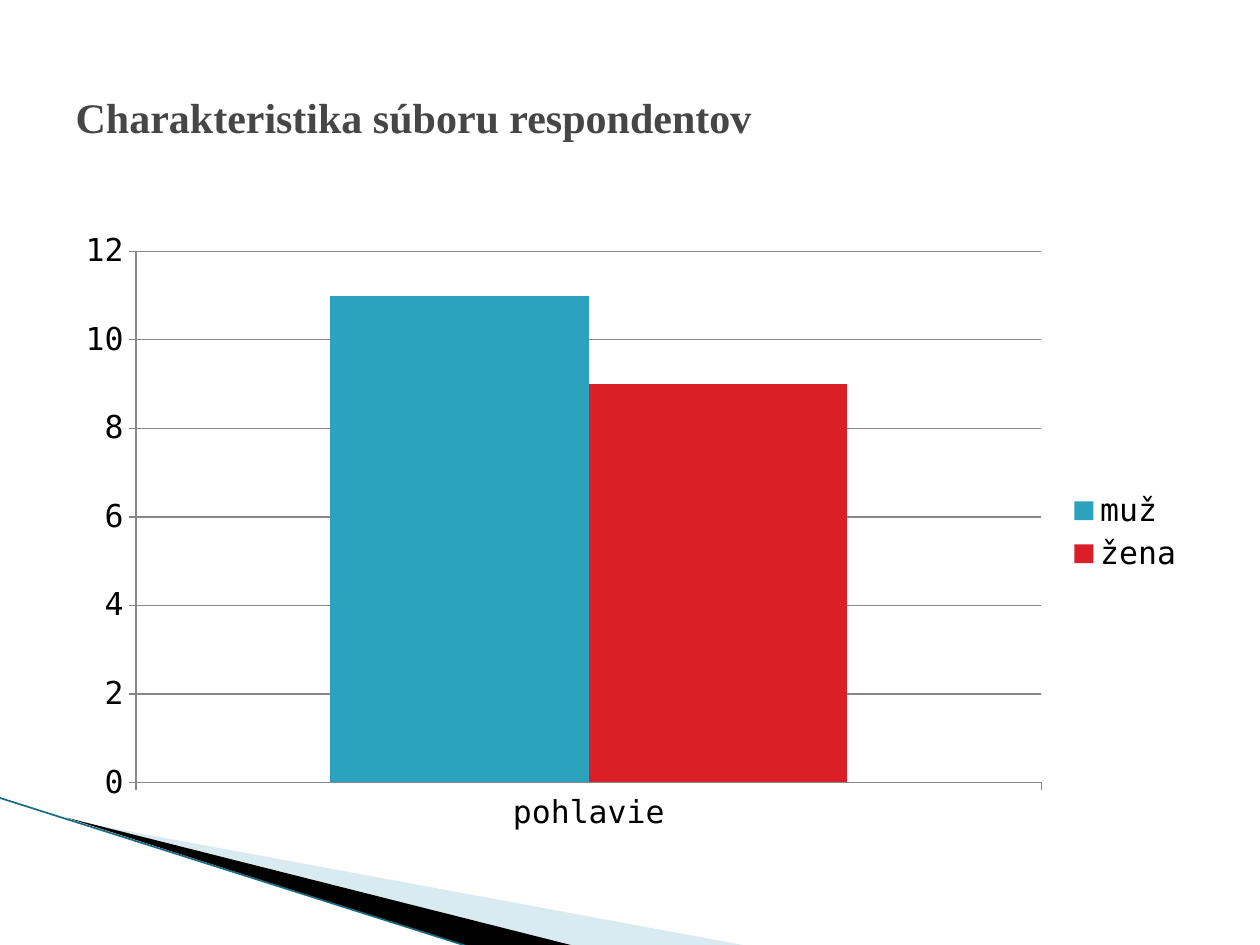
from lxml.etree import SubElement
from pptx import Presentation
from pptx.chart.data import CategoryChartData
from pptx.dml.color import RGBColor
from pptx.enum.chart import XL_CHART_TYPE, XL_LEGEND_POSITION, XL_TICK_MARK
from pptx.enum.shapes import MSO_CONNECTOR
from pptx.enum.text import MSO_ANCHOR, PP_ALIGN
from pptx.oxml.ns import qn
from pptx.util import Inches, Pt

BLACK = RGBColor(0x00, 0x00, 0x00)
GRAY = RGBColor(0x46, 0x46, 0x46)
AXIS_GRAY = RGBColor(0x87, 0x87, 0x87)
PALE_BLUE = RGBColor(0xA0, 0xCB, 0xDC)
DARK_TEAL = RGBColor(0x16, 0x6C, 0x80)
TEAL = RGBColor(0x2D, 0xA2, 0xBF)
RED = RGBColor(0xDA, 0x1F, 0x28)

TITLE = "Charakteristika súboru respondentov"
CATEGORIES = ["pohlavie"]
SERIES = [("muž", [11], TEAL), ("žena", [9], RED)]
WEDGES = [
    ((0.78, 5.47, 4.16, 1.58),
     [(0.55, 6.51), (5.95, 7.51), (4.56, 7.51), (0.55, 6.5)], PALE_BLUE, 40),
    ((-0.06, 6.33, 4.16, 0.92),
     [(0.53, 6.49), (4.57, 7.51), (3.74, 7.52), (0.53, 6.49)], BLACK, 100),
]
EDGE = (-0.01, 6.33, 3.74, 7.52)
TITLE_BOX = (0.5, 0.3, 9, 1.25)
CHART_BOX = (0.5, 1.75, 9, 4.95)


def inches(values):
    return [Inches(value) for value in values]


def place(shape, box):
    shape.left, shape.top, shape.width, shape.height = inches(box)


def set_frame(wedge, box):
    old_left, old_top = wedge.left, wedge.top
    place(wedge, box)
    outline = next(wedge._element.iter(qn("a:path")))
    outline.set("w", str(wedge.width))
    outline.set("h", str(wedge.height))
    for point in outline.iter(qn("a:pt")):
        point.set("x", str(int(point.get("x")) + old_left - wedge.left))
        point.set("y", str(int(point.get("y")) + old_top - wedge.top))


def add_wedge(page, box, points, color, opacity):
    start, *rest = [inches(point) for point in points]
    builder = page.shapes.build_freeform(*start)
    builder.add_line_segments(rest, close=True)
    wedge = builder.convert_to_shape()
    set_frame(wedge, box)
    wedge.shadow.inherit = False
    wedge.fill.solid()
    wedge.fill.fore_color.rgb = color
    wedge.line.fill.background()
    if opacity < 100:
        fill_color = wedge.fill._xPr.find(qn("a:solidFill"))[0]
        SubElement(fill_color, qn("a:alpha")).set("val", str(opacity * 1000))


def add_edge(page):
    edge = page.shapes.add_connector(MSO_CONNECTOR.STRAIGHT, *inches(EDGE))
    edge.line.color.rgb = DARK_TEAL
    edge.line.width = Pt(0.95)
    SubElement(edge._element.spPr, qn("a:effectLst"))


def format_title(title):
    place(title, TITLE_BOX)
    title.text_frame.text = TITLE
    title.text_frame.vertical_anchor = MSO_ANCHOR.MIDDLE
    para = title.text_frame.paragraphs[0]
    para.alignment = PP_ALIGN.LEFT
    font = para.runs[0].font
    font.name, font.size, font.bold = "Times New Roman", Pt(24), True
    font.color.rgb = GRAY


def add_gender_chart(page):
    data = CategoryChartData()
    data.categories = CATEGORIES
    for name, values, _ in SERIES:
        data.add_series(name, values)
    chart = page.shapes.add_chart(
        XL_CHART_TYPE.COLUMN_CLUSTERED, *inches(CHART_BOX), data
    ).chart
    chart.has_title = False
    chart.font.name, chart.font.size = "DejaVu Sans Mono", Pt(18)
    chart.font.color.rgb = BLACK
    chart.has_legend = True
    chart.legend.position = XL_LEGEND_POSITION.RIGHT
    chart.legend.include_in_layout = False

    plot = chart.plots[0]
    plot.vary_by_categories = False
    plot.gap_width, plot.overlap = 150, 0
    for series, (_, _, color) in zip(plot.series, SERIES):
        series.format.fill.solid()
        series.format.fill.fore_color.rgb = color

    for axis in (chart.category_axis, chart.value_axis):
        axis.major_tick_mark = XL_TICK_MARK.OUTSIDE
        axis.minor_tick_mark = XL_TICK_MARK.NONE
        axis.format.line.color.rgb = AXIS_GRAY
    scale = chart.value_axis
    scale.minimum_scale, scale.maximum_scale, scale.major_unit = 0, 12, 2
    scale.has_major_gridlines = True
    scale.major_gridlines.format.line.color.rgb = AXIS_GRAY


def main():
    deck = Presentation()
    deck.slide_width, deck.slide_height = Inches(10), Inches(7.5)
    page = deck.slides.add_slide(deck.slide_layouts[5])
    for wedge in WEDGES:
        add_wedge(page, *wedge)
    add_edge(page)
    format_title(page.shapes.title)
    add_gender_chart(page)
    deck.save("out.pptx")


if __name__ == "__main__":
    main()
